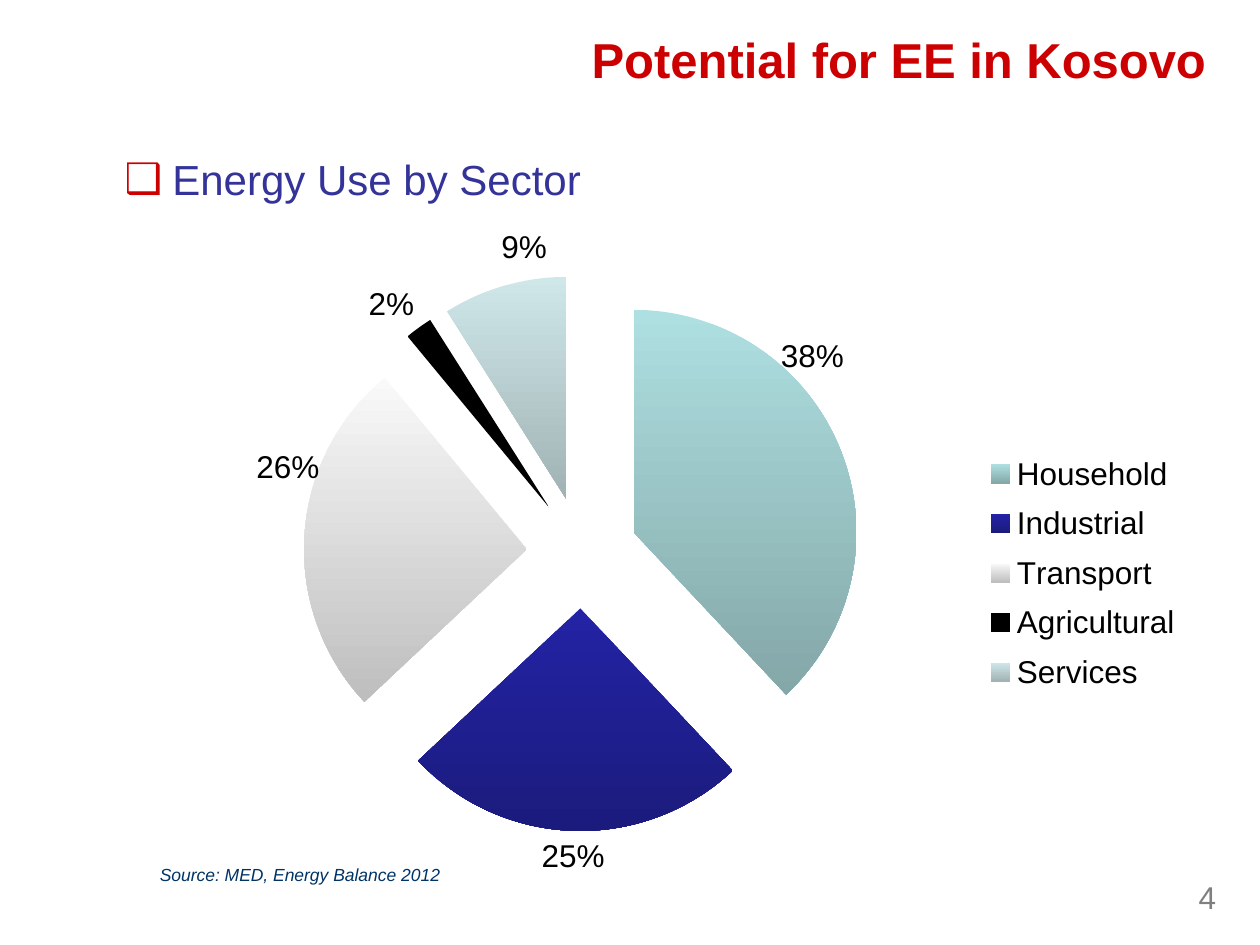
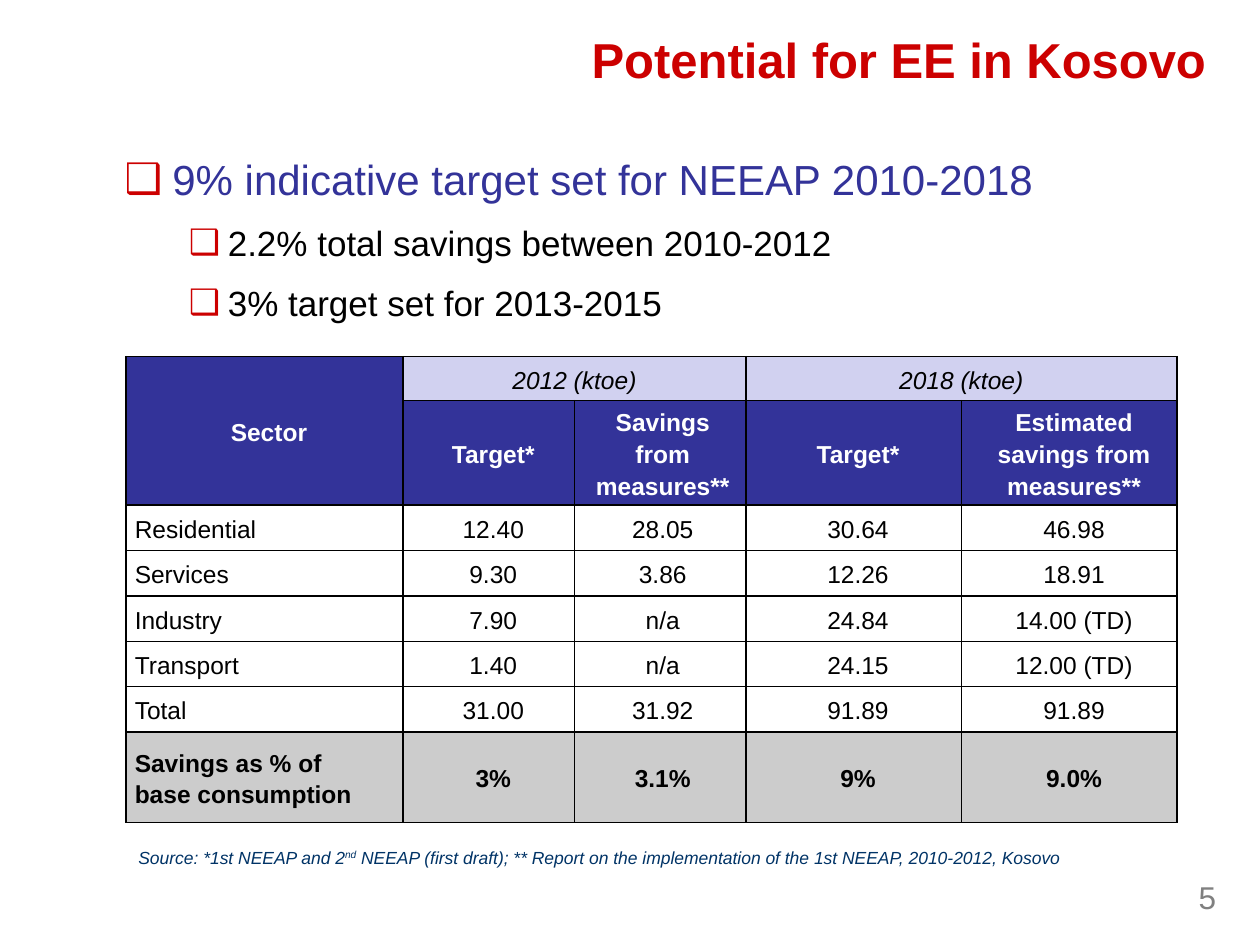
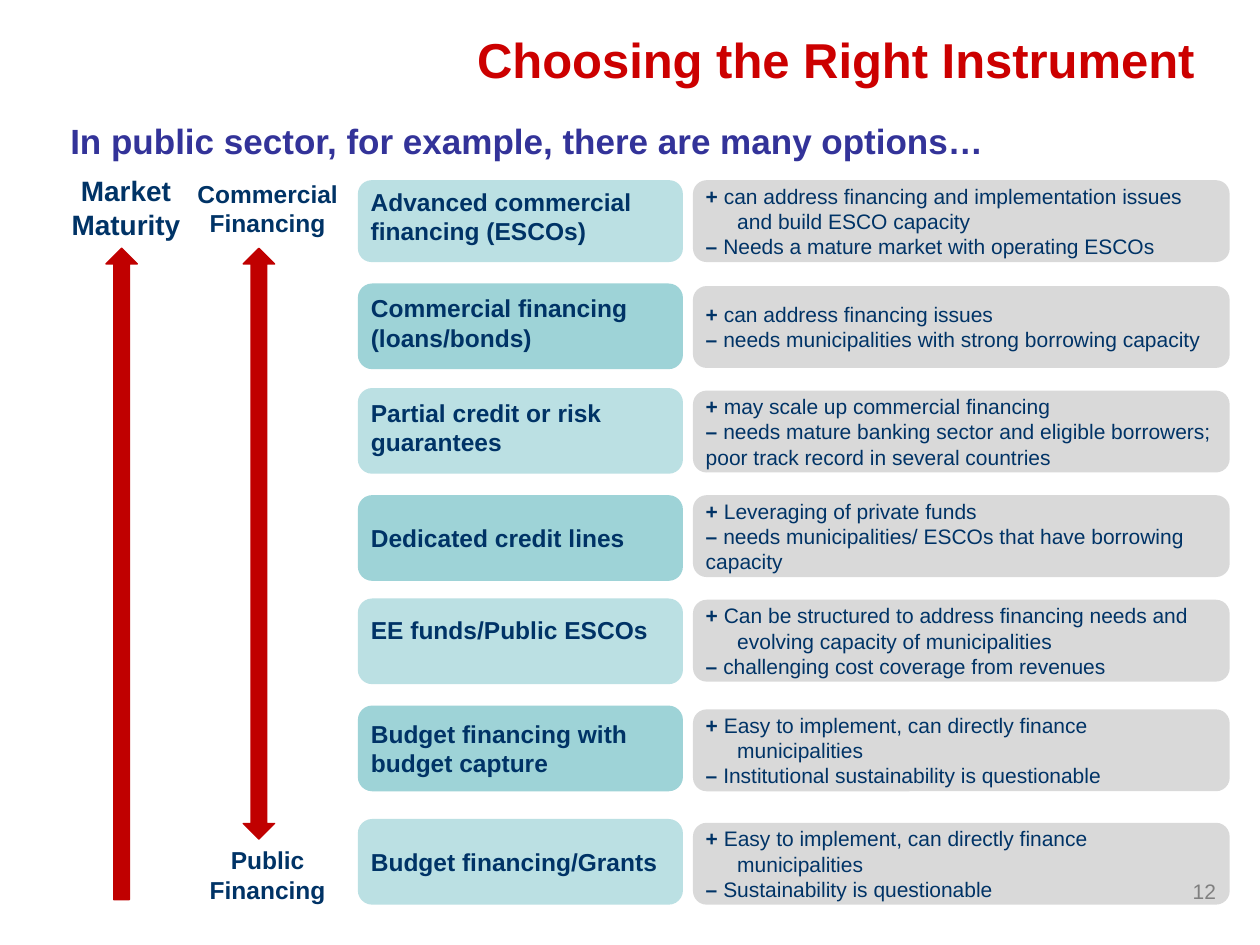
"""Build three slides on energy efficiency potential and financing instruments."""
from dataclasses import dataclass

from lxml import etree
from pptx import Presentation
from pptx.chart.data import CategoryChartData
from pptx.dml.color import RGBColor
from pptx.enum.chart import XL_CHART_TYPE, XL_LABEL_POSITION, XL_LEGEND_POSITION
from pptx.enum.shapes import MSO_SHAPE
from pptx.enum.text import MSO_ANCHOR, PP_ALIGN
from pptx.oxml import parse_xml
from pptx.oxml.ns import nsdecls, qn
from pptx.util import Pt

PX = 9144
LEFT, CENTER, RIGHT = PP_ALIGN.LEFT, PP_ALIGN.CENTER, PP_ALIGN.RIGHT
TOP, MIDDLE, BOTTOM = MSO_ANCHOR.TOP, MSO_ANCHOR.MIDDLE, MSO_ANCHOR.BOTTOM
ROUNDED = MSO_SHAPE.ROUNDED_RECTANGLE
UP_ARROW, UP_DOWN_ARROW = MSO_SHAPE.UP_ARROW, MSO_SHAPE.UP_DOWN_ARROW
PIE = XL_CHART_TYPE.PIE_EXPLODED
OUTSIDE = XL_LABEL_POSITION.OUTSIDE_END
LEGEND_RIGHT = XL_LEGEND_POSITION.RIGHT


@dataclass(frozen=True)
class Look:
    """Type size, colour and style of a text."""
    size: int
    color: str
    bold: bool = False
    italic: bool = False


@dataclass(frozen=True)
class Theme:
    """Colours and type styles shared by the slides."""
    font: str = "Arial"
    red: str = "CC0000"
    arrow: str = "C00000"
    black: str = "000000"
    indigo: str = "333399"
    lilac: str = "D1D1F0"
    silver: str = "CCCCCC"
    card_light: str = "BBE0E3"
    card_dark: str = "9ED3D7"
    note_fill: str = "D9D9D9"
    slices: tuple = (("AEDFE1", "84A7A8"), ("2323A5", "1B1B7D"), ("F9F9F9", "BEBEBE"),
                     ("000000", "000000"), ("CFE7E9", "A0B2B4"))
    title: Look = Look(28, "CC0000", bold=True)
    bullets: tuple = (Look(24, "333399"), Look(20, "000000"))
    lead: Look = Look(20, "333399", bold=True)
    source: Look = Look(10, "003366", italic=True)
    number: Look = Look(18, "808080")
    number_small: Look = Look(12, "808080")
    axis: Look = Look(16, "003366", bold=True)
    label: Look = Look(14, "003366", bold=True)
    note: Look = Look(12, "003366")
    sign: Look = Look(12, "003366", bold=True)
    band: Look = Look(14, "000000", italic=True)
    head: Look = Look(14, "FFFFFF", bold=True)
    body: Look = Look(14, "000000")
    total: Look = Look(14, "000000", bold=True)
    chart_size: int = 18


THEME = Theme()
TITLE = "Potential for EE in Kosovo"
BULLET_INDENTS = ((44, -38), (88, -31))
SHARES = {"Household": 38, "Industrial": 25, "Transport": 26, "Agricultural": 2, "Services": 9}
LABEL_SHIFTS = {0: (-0.06, -0.11), 2: (0.02, -0.1), 4: (0.04, -0.02)}
COLUMNS = (220, 136, 136, 171, 171)
ROWS = (35, 83, 36, 36, 36, 36, 36, 72)
CELL_MARGINS = ((7, 0), (10, 3), (11, 7), (10, 3), (9, 1))
SAVINGS = (
    ("Sector", "2012 (ktoe)", "", "2018 (ktoe)", ""),
    ("", "Target*", "Savings from measures**", "Target*", "Estimated savings from measures**"),
    ("Residential", "12.40", "28.05", "30.64", "46.98"),
    ("Services", "9.30", "3.86", "12.26", "18.91"),
    ("Industry", "7.90", "n/a", "24.84", "14.00 (TD)"),
    ("Transport", "1.40", "n/a", "24.15", "12.00 (TD)"),
    ("Total", "31.00", "31.92", "91.89", "91.89"),
    ("Savings as % of base consumption", "3%", "3.1%", "9%", "9.0%"),
)
INSTRUMENTS = (
    (143, 143, 8, "Advanced commercial financing (ESCOs)", 25,
     "can address financing and implementation issues and build ESCO capacity",
     "Needs a mature market with operating ESCOs"),
    (225, 227, 7, "Commercial financing (loans/bonds)", 0,
     "can address financing issues",
     "needs municipalities with strong borrowing capacity"),
    (308, 310, 7, "Partial credit or risk guarantees", 0,
     "may scale up commercial financing",
     "needs mature banking sector and eligible borrowers; poor track record in several countries"),
    (393, 393, 0, "Dedicated credit lines", 0,
     "Leveraging of private funds",
     "needs municipalities/ ESCOs that have borrowing capacity"),
    (475, 476, 18, "EE funds/Public ESCOs", 25,
     "Can be structured to address financing needs and evolving capacity of municipalities",
     "challenging cost coverage from revenues"),
    (560, 563, 0, "Budget financing with budget capture", 25,
     "Easy to implement, can directly finance municipalities",
     "Institutional sustainability is questionable"),
    (650, 653, 0, "Budget financing/Grants", 25,
     "Easy to implement, can directly finance municipalities",
     "Sustainability is questionable"),
)


def px(*lengths):
    """Turn lengths in px into EMU."""
    return [length * PX for length in lengths]


def rgb(color):
    """Return the colour object of a hex code."""
    return RGBColor.from_string(color)


def style_font(font, look):
    """Give a font the typeface and a look."""
    font.name, font.size = THEME.font, Pt(look.size)
    font.bold, font.italic = look.bold, look.italic
    font.color.rgb = rgb(look.color)


def write(para, spans, align=LEFT):
    """Fill a paragraph with (text, look) spans and return its runs."""
    para.text = spans[0][0]
    for text, _ in spans[1:]:
        para.add_run().text = text
    for run, (_, look) in zip(para.runs, spans):
        style_font(run.font, look)
    para.alignment = align
    return para.runs


def next_paragraph(frame, index):
    """Return the first paragraph of a frame or a new one."""
    return frame.add_paragraph() if index else frame.paragraphs[0]


def set_indent(para, left, first):
    """Set the left and first-line indents of a paragraph."""
    properties = para._p.get_or_add_pPr()
    properties.set("marL", str(left * PX))
    properties.set("indent", str(first * PX))
    return properties


def add_text(page, place, lines, look, align=LEFT, anchor=TOP, wrap=True):
    """Add a text box with one paragraph for each line."""
    frame = page.shapes.add_textbox(*px(*place)).text_frame
    frame.word_wrap, frame.vertical_anchor = wrap, anchor
    for index, line in enumerate(lines):
        write(next_paragraph(frame, index), [(line, look)], align)
    return frame


def add_title(page, text, right=967):
    """Add the right-aligned slide title."""
    add_text(page, (50, 0, right - 50, 75), [text], THEME.title, RIGHT, BOTTOM)


def add_number(page, number, look=THEME.number):
    """Add the slide number."""
    add_text(page, (825, 692, 150, 43), [number], look, RIGHT)


def add_bullets(page, items):
    """Add the (level, text) bullets of the slide body."""
    frame = page.shapes.add_textbox(*px(83, 117, 883, 567)).text_frame
    frame.word_wrap = True
    for index, (level, text) in enumerate(items):
        para, look = next_paragraph(frame, index), THEME.bullets[level]
        properties = set_indent(para, *BULLET_INDENTS[level])
        color = etree.SubElement(properties, qn("a:buClr"))
        etree.SubElement(color, qn("a:srgbClr"), val=THEME.red)
        etree.SubElement(properties, qn("a:buFont"), typeface=THEME.font)
        etree.SubElement(properties, qn("a:buChar"), char="❑")
        write(para, [(text, look)])
        para.space_after = Pt(6)
        if index:
            para.space_before = Pt(look.size * 0.2)


def add_shape(page, kind, place, fill, line=None):
    """Add a preset shape with a flat fill."""
    shape = page.shapes.add_shape(kind, *px(*place))
    shape.shadow.inherit = False
    shape.fill.solid()
    shape.fill.fore_color.rgb = rgb(fill)
    if line:
        shape.line.color.rgb, shape.line.width = rgb(line), Pt(0.75)
    else:
        shape.line.fill.background()
    return shape


def add_card(page, place, fill, lift=0):
    """Add a rounded card and return its text frame, raised by lift."""
    frame = add_shape(page, ROUNDED, place, fill).text_frame
    frame.word_wrap, frame.vertical_anchor = True, MIDDLE
    frame.margin_left, frame.margin_top, frame.margin_right, frame.margin_bottom = px(
        7, 0, 10, 2 * lift)
    return frame


def add_instrument(page, index, instrument):
    """Add one financing instrument with its pros and cons."""
    top, note_top, lift, name, hang, pro, con = instrument
    fill = THEME.card_dark if index % 2 else THEME.card_light
    label = add_card(page, (284, top, 258, 68 if index else 65), fill, lift // 2)
    write(label.paragraphs[0], [(name, THEME.label)])
    note = add_card(page, (550, note_top, 426, 65), THEME.note_fill)
    for line, (sign, text) in enumerate((("+ ", pro), ("– ", con))):
        para = next_paragraph(note, line)
        set_indent(para, hang, -hang)
        write(para, [(sign, THEME.sign), (text, THEME.note)])


def layout(**fractions):
    """Return a manual chart layout from fractions of the chart."""
    modes = "".join(f'<c:{side}Mode val="edge"/>' for side in "xy" if "w" in fractions)
    target = '<c:layoutTarget val="inner"/>' if fractions.pop("inner", False) else ""
    values = "".join(f'<c:{key} val="{value}"/>' for key, value in fractions.items())
    return parse_xml(f'<c:layout {nsdecls("c")}><c:manualLayout>{target}{modes}{values}'
                     "</c:manualLayout></c:layout>")


def add_pie(page, place, shares):
    """Add the exploded pie of shares with its legend."""
    data = CategoryChartData()
    data.categories = list(shares)
    data.add_series("%", list(shares.values()))
    chart = page.shapes.add_chart(PIE, *px(*place), data).chart
    chart.has_title = False
    style_font(chart.font, Look(THEME.chart_size, THEME.black))
    plot = chart.plots[0]
    plot.vary_by_categories = True
    area = plot._element.getparent()
    for old in area.findall(qn("c:layout")):
        area.remove(old)
    area.insert(0, layout(inner=True, x=0.16, y=0.08, w=0.5, h=0.83))
    series = plot.series[0]
    for old in series._element.findall(qn("c:explosion")):
        series._element.remove(old)
    explosion = etree.Element(qn("c:explosion"), val="25")
    series._element.find(qn("c:tx")).addnext(explosion)
    for index, colors in enumerate(THEME.slices):
        fill = series.points[index].format.fill
        fill.gradient()
        fill.gradient_angle = 270
        for stop, color in zip(fill.gradient_stops, colors):
            stop.color.rgb = rgb(color)
    add_pie_labels(series)
    chart.has_legend = True
    chart.legend.position = LEGEND_RIGHT
    chart.legend.include_in_layout = False
    position = chart.legend._element.find(qn("c:legendPos"))
    position.addnext(layout(x=0.77, y=0.33, w=0.18, h=0.39))


def add_pie_labels(series):
    """Show percentages outside the slices, some of them shifted."""
    labels = series.data_labels
    labels.show_percentage, labels.show_value = True, False
    labels.position = OUTSIDE
    for index in LABEL_SHIFTS:
        series.points[index].data_label.position = OUTSIDE
    for label, (x, y) in zip(series._element.xpath("c:dLbls/c:dLbl"), LABEL_SHIFTS.values()):
        label.find(qn("c:idx")).addnext(layout(x=x, y=y))
        label.find(qn("c:showVal")).set("val", "0")
        label.find(qn("c:showPercent")).set("val", "1")
    for lines in series._element.xpath("c:dLbls/c:showLeaderLines"):
        lines.set("val", "0")


def set_borders(cell):
    """Draw a thin black line on the four sides of a cell."""
    properties = cell._tc.get_or_add_tcPr()
    for index, side in enumerate(("lnL", "lnR", "lnT", "lnB")):
        properties.insert(index, parse_xml(
            f'<a:{side} {nsdecls("a")} w="12700"><a:solidFill><a:srgbClr val="{THEME.black}"/>'
            f"</a:solidFill></a:{side}>"))


def cell_style(row, column):
    """Return the look and fill of a table cell."""
    if row == 0 and column:
        return THEME.band, THEME.lilac
    if row < 2:
        return THEME.head, THEME.indigo
    if row == len(ROWS) - 1:
        return THEME.total, THEME.silver
    return THEME.body, None


def add_savings_table(page, left, top):
    """Add the table of targets and savings by sector."""
    table = page.shapes.add_table(len(ROWS), len(COLUMNS),
                                  *px(left, top, sum(COLUMNS), sum(ROWS))).table
    table.first_row = table.horz_banding = False
    for column, width in zip(table.columns, COLUMNS):
        column.width = width * PX
    for row, height in zip(table.rows, ROWS):
        row.height = height * PX
    for first, last in (((0, 0), (1, 0)), ((0, 1), (0, 2)), ((0, 3), (0, 4))):
        table.cell(*first).merge(table.cell(*last))
    for row, texts in enumerate(SAVINGS):
        for column, text in enumerate(texts):
            cell = table.cell(row, column)
            look, fill = cell_style(row, column)
            left_aligned = row > 1 and column == 0
            margins = (0, 0) if look is THEME.band else CELL_MARGINS[column]
            cell.margin_left, cell.margin_right = px(margins[0], 30 if left_aligned else margins[1])
            cell.margin_top = cell.margin_bottom = 0
            cell.vertical_anchor = MIDDLE
            if fill:
                cell.fill.solid()
                cell.fill.fore_color.rgb = rgb(fill)
            else:
                cell.fill.background()
            set_borders(cell)
            if text:
                para = cell.text_frame.paragraphs[0]
                write(para, [(text, look)], LEFT if left_aligned else CENTER)
                para.line_spacing = 1.15


def build_sector_page(page):
    """Show energy use by sector."""
    add_title(page, TITLE)
    add_bullets(page, [(0, "Energy Use by Sector")])
    add_number(page, "4")
    add_pie(page, (100, 175, 883, 533), SHARES)
    add_text(page, (117, 681, 244, 27), ["Source: MED, Energy Balance 2012"],
             THEME.source, wrap=False)


def build_target_page(page):
    """Show savings targets and results."""
    add_title(page, TITLE)
    add_bullets(page, [(0, "9% indicative target set for NEEAP 2010-2018"),
                       (1, "2.2% total savings between 2010-2012"),
                       (1, "3% target set for 2013-2015")])
    add_number(page, "5")
    frame = add_text(page, (100, 667, 756, 27), [""], THEME.source, wrap=False)
    parts = ("Source: *1st NEEAP and 2", "nd", " NEEAP (first draft); ** Report on the "
             "implementation of the 1st NEEAP, 2010-2012, Kosovo")
    runs = write(frame.paragraphs[0], [(part, THEME.source) for part in parts])
    runs[1]._r.get_or_add_rPr().set("baseline", "30000")
    add_savings_table(page, 100, 283)


def build_instrument_page(page):
    """Show financing instruments along market maturity."""
    add_title(page, "Choosing the Right Instrument", 958)
    add_text(page, (46, 90, 900, 43),
             ["In public sector, for example, there are many options…"], THEME.lead)
    add_shape(page, UP_ARROW, (84, 197, 25, 517), THEME.arrow, THEME.arrow)
    add_shape(page, UP_DOWN_ARROW, (193, 197, 25, 469), THEME.arrow, THEME.arrow)
    add_text(page, (46, 133, 108, 64), ["Market", "Maturity"], THEME.axis, CENTER)
    for top, kind in ((137, "Commercial"), (666, "Public")):
        add_text(page, (146, top, 133, 57), [kind, "Financing"], THEME.label, CENTER)
    for index, instrument in enumerate(INSTRUMENTS):
        add_instrument(page, index, instrument)
    add_number(page, "12", THEME.number_small)


def main():
    """Build and save the deck."""
    deck = Presentation()
    deck.slide_width, deck.slide_height = px(1000, 750)
    for build in (build_sector_page, build_target_page, build_instrument_page):
        build(deck.slides.add_slide(deck.slide_layouts[6]))
    deck.save("out.pptx")


if __name__ == "__main__":
    main()
